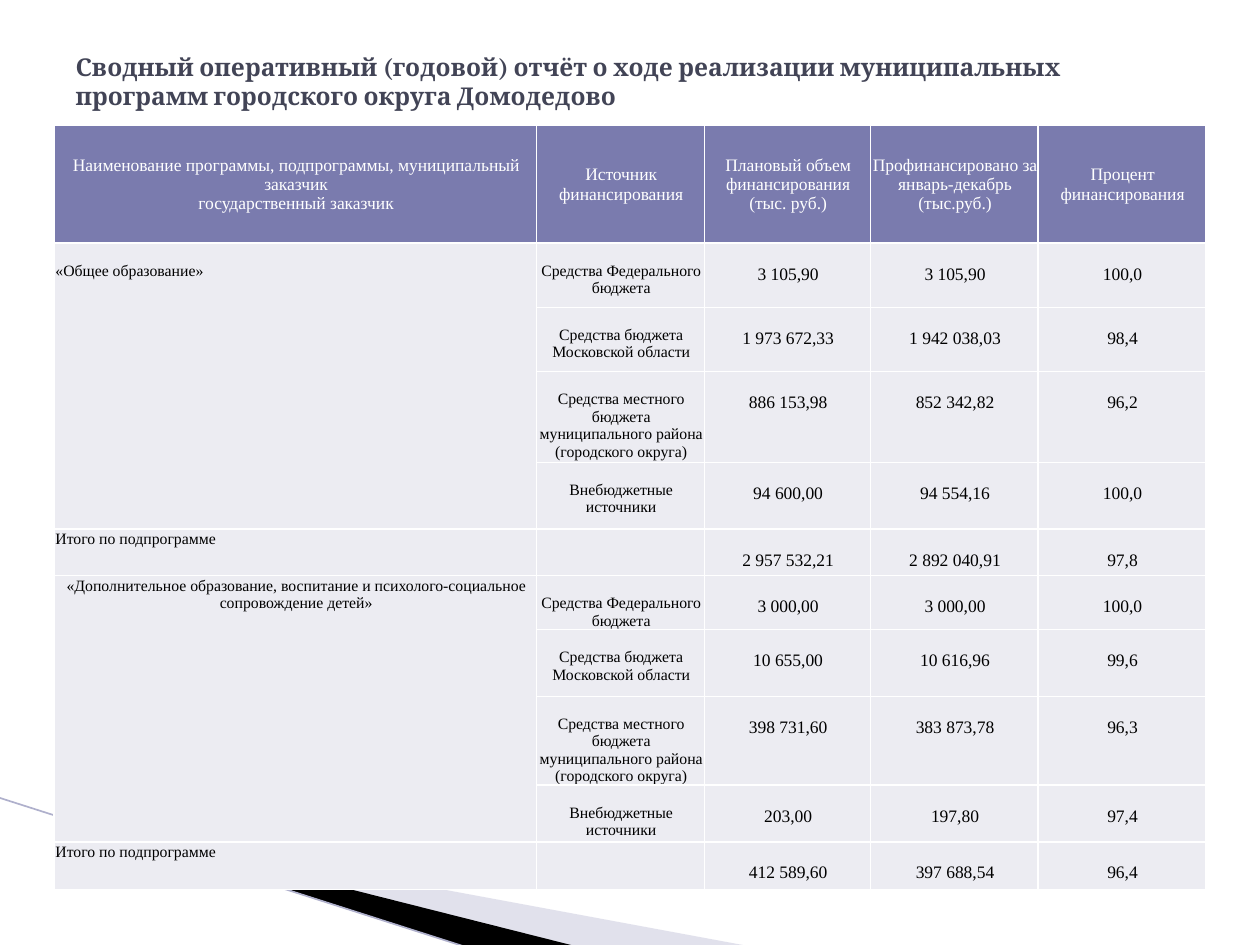
"""Build the slide with the yearly financing report of municipal programmes."""
from dataclasses import dataclass

from lxml.etree import SubElement
from pptx import Presentation
from pptx.dml.color import RGBColor as Rgb
from pptx.enum.shapes import MSO_CONNECTOR as Connector
from pptx.enum.text import MSO_ANCHOR as Anchor, MSO_AUTO_SIZE as AutoSize, PP_ALIGN as Align
from pptx.oxml.ns import qn
from pptx.util import Inches, Pt


@dataclass(frozen=True)
class Theme:
    """Colours, fonts and type sizes of the deck."""
    title_color: str = "424456"
    header_fill: str = "7A7BAE"
    body_fill: str = "ECECF2"
    white: str = "FFFFFF"
    black: str = "000000"
    wedge: str = "B6B6D1"
    line: str = "AFB0CC"
    title_font: str = "Cambria"
    table_font: str = "Times New Roman"
    title_size: float = 14
    header_size: float = 10
    label_size: float = 9
    value_size: float = 10
    border_width: float = 1
    line_width: float = 0.95


@dataclass(frozen=True)
class CellStyle:
    """Look of one kind of table cell, with the inset above its text."""
    size: float
    color: str
    fill: str
    align: Align = Align.CENTER
    anchor: Anchor = Anchor.TOP
    top: float = 0.01


@dataclass(frozen=True)
class Subprogram:
    """A subprogramme with its financing by source and its total."""
    name: str
    style: CellStyle
    amounts: tuple
    total: tuple


@dataclass(frozen=True)
class Wedge:
    """A filled outline in the corner of the page."""
    points: tuple
    color: str
    opacity: int = 100


THEME = Theme()
HEADER = CellStyle(THEME.header_size, THEME.white, THEME.header_fill, anchor=Anchor.MIDDLE)
NAME = CellStyle(THEME.label_size, THEME.black, THEME.body_fill)
LOWERED_NAME = CellStyle(THEME.label_size, THEME.black, THEME.body_fill, Align.LEFT, top=0.15)
TOTAL = CellStyle(THEME.label_size, THEME.black, THEME.body_fill, Align.LEFT)
SOURCE = CellStyle(THEME.label_size, THEME.black, THEME.body_fill, top=0.15)
VALUE = CellStyle(THEME.value_size, THEME.black, THEME.body_fill, top=0.17)

TITLE = ("Сводный оперативный (годовой) отчёт о ходе реализации муниципальных "
         "программ городского округа Домодедово")
HEADINGS = (
    "Наименование программы, подпрограммы, муниципальный заказчик\nгосударственный заказчик",
    "Источник финансирования",
    "Плановый объем финансирования (тыс. руб.)",
    "Профинансировано за январь-декабрь (тыс.руб.)",
    "Процент финансирования",
)
SOURCES = (
    "Средства Федерального бюджета",
    "Средства бюджета Московской области",
    "Средства местного бюджета муниципального района (городского округа)",
    "Внебюджетные источники",
)
SUBPROGRAMS = (
    Subprogram(
        "«Общее образование»", LOWERED_NAME,
        (("3 105,90", "3 105,90", "100,0"),
         ("1 973 672,33", "1 942 038,03", "98,4"),
         ("886 153,98", "852 342,82", "96,2"),
         ("94 600,00", "94 554,16", "100,0")),
        ("2 957 532,21", "2 892 040,91", "97,8")),
    Subprogram(
        "«Дополнительное образование, воспитание и психолого-социальное сопровождение детей»", NAME,
        (("3 000,00", "3 000,00", "100,0"),
         ("10 655,00", "10 616,96", "99,6"),
         ("398 731,60", "383 873,78", "96,3"),
         ("203,00", "197,80", "97,4")),
        ("412 589,60", "397 688,54", "96,4")),
)
COLUMN_WIDTHS = (3.83, 1.33, 1.32, 1.33, 1.33)
ROW_HEIGHTS = (0.94, 0.51, 0.51, 0.72, 0.53, 0.37, 0.39, 0.53, 0.53, 0.45, 0.38)
WEDGES = (
    Wedge(((0.55, 6.51), (5.95, 7.51), (4.56, 7.51), (0.55, 6.5)), THEME.wedge, 40),
    Wedge(((0.53, 6.49), (4.57, 7.51), (3.72, 7.52), (0.54, 6.5)), THEME.black),
)


def draw_wedge(page, wedge: Wedge) -> None:
    """Draw one closed outline with its colour and opacity."""
    start, *rest = [(Inches(x), Inches(y)) for x, y in wedge.points]
    builder = page.shapes.build_freeform(*start)
    builder.add_line_segments(rest, close=True)
    shape = builder.convert_to_shape()
    shape.shadow.inherit = False
    shape.line.fill.background()
    shape.fill.solid()
    shape.fill.fore_color.rgb = Rgb.from_string(wedge.color)
    if wedge.opacity < 100:
        color = next(shape.element.spPr.iter(qn("a:srgbClr")))
        SubElement(color, qn("a:alpha"), val=str(wedge.opacity * 1000))


def draw_corner_line(page) -> None:
    """Draw the thin slanted line in the lower left corner."""
    line = page.shapes.add_connector(
        Connector.STRAIGHT, Inches(-0.01), Inches(6.33), Inches(3.71), Inches(7.52))
    line.line.color.rgb = Rgb.from_string(THEME.line)
    line.line.width = Pt(THEME.line_width)
    SubElement(line.element.spPr, qn("a:effectLst"))


def write_title(page) -> None:
    """Place and format the title placeholder."""
    box = page.shapes.title
    box.left, box.top, box.width, box.height = Inches(0.5), Inches(0.3), Inches(9), Inches(0.69)
    frame = box.text_frame
    frame.word_wrap = True
    frame.auto_size = AutoSize.NONE
    frame.vertical_anchor = Anchor.MIDDLE
    para = frame.paragraphs[0]
    para.alignment = Align.LEFT
    span = para.add_run()
    span.text = TITLE
    span.font.name = THEME.title_font
    span.font.size = Pt(THEME.title_size)
    span.font.bold = True
    span.font.color.rgb = Rgb.from_string(THEME.title_color)


def format_cell(cell, style: CellStyle) -> None:
    """Give a cell its insets, anchor, white borders and fill."""
    cell.margin_left, cell.margin_right = Inches(0.01), Inches(0)
    cell.margin_top, cell.margin_bottom = Inches(style.top), Inches(0)
    cell.vertical_anchor = style.anchor
    properties = cell._tc.get_or_add_tcPr()
    for side in ("a:lnL", "a:lnR", "a:lnT", "a:lnB"):
        border = SubElement(properties, qn(side), w=str(Pt(THEME.border_width)))
        SubElement(SubElement(border, qn("a:solidFill")), qn("a:srgbClr"), val=THEME.white)
    cell.fill.solid()
    cell.fill.fore_color.rgb = Rgb.from_string(style.fill)


def write_cell(cell, text: str, style: CellStyle) -> None:
    """Format a cell and write its text, one run per line."""
    format_cell(cell, style)
    para = cell.text_frame.paragraphs[0]
    para.alignment = style.align
    for index, line in enumerate(text.split("\n") if text else ()):
        if index:
            para.add_line_break()
        span = para.add_run()
        span.text = line
        span.font.name = THEME.table_font
        span.font.size = Pt(style.size)
        span.font.color.rgb = Rgb.from_string(style.color)


def write_row(table, row: int, texts: tuple, styles: tuple) -> None:
    """Write one table row from its texts and styles."""
    for column, (text, style) in enumerate(zip(texts, styles)):
        write_cell(table.cell(row, column), text, style)


def draw_table(page) -> None:
    """Build the financing table."""
    table = page.shapes.add_table(
        len(ROW_HEIGHTS), len(COLUMN_WIDTHS), Inches(0.43), Inches(0.99),
        Inches(sum(COLUMN_WIDTHS)), Inches(sum(ROW_HEIGHTS))).table
    table.first_row = table.horz_banding = False
    for column, width in zip(table.columns, COLUMN_WIDTHS):
        column.width = Inches(width)
    for row, height in zip(table.rows, ROW_HEIGHTS):
        row.height = Inches(height)
    values = (VALUE,) * 3
    write_row(table, 0, HEADINGS, (HEADER,) * len(HEADINGS))
    for index, program in enumerate(SUBPROGRAMS):
        first = 1 + index * (len(SOURCES) + 1)
        last = first + len(SOURCES) - 1
        for offset, (source, amounts) in enumerate(zip(SOURCES, program.amounts)):
            name = "" if offset else program.name
            write_row(table, first + offset, (name, source, *amounts), (program.style, SOURCE, *values))
        table.cell(first, 0).merge(table.cell(last, 0))
        write_row(table, last + 1, ("Итого по подпрограмме", "", *program.total), (TOTAL, NAME, *values))


def main() -> None:
    """Assemble and save the deck."""
    deck = Presentation()
    deck.slide_width, deck.slide_height = Inches(10), Inches(7.5)
    page = deck.slides.add_slide(deck.slide_layouts[5])
    for wedge in WEDGES:
        draw_wedge(page, wedge)
    draw_corner_line(page)
    write_title(page)
    draw_table(page)
    deck.save("out.pptx")


if __name__ == "__main__":
    main()
